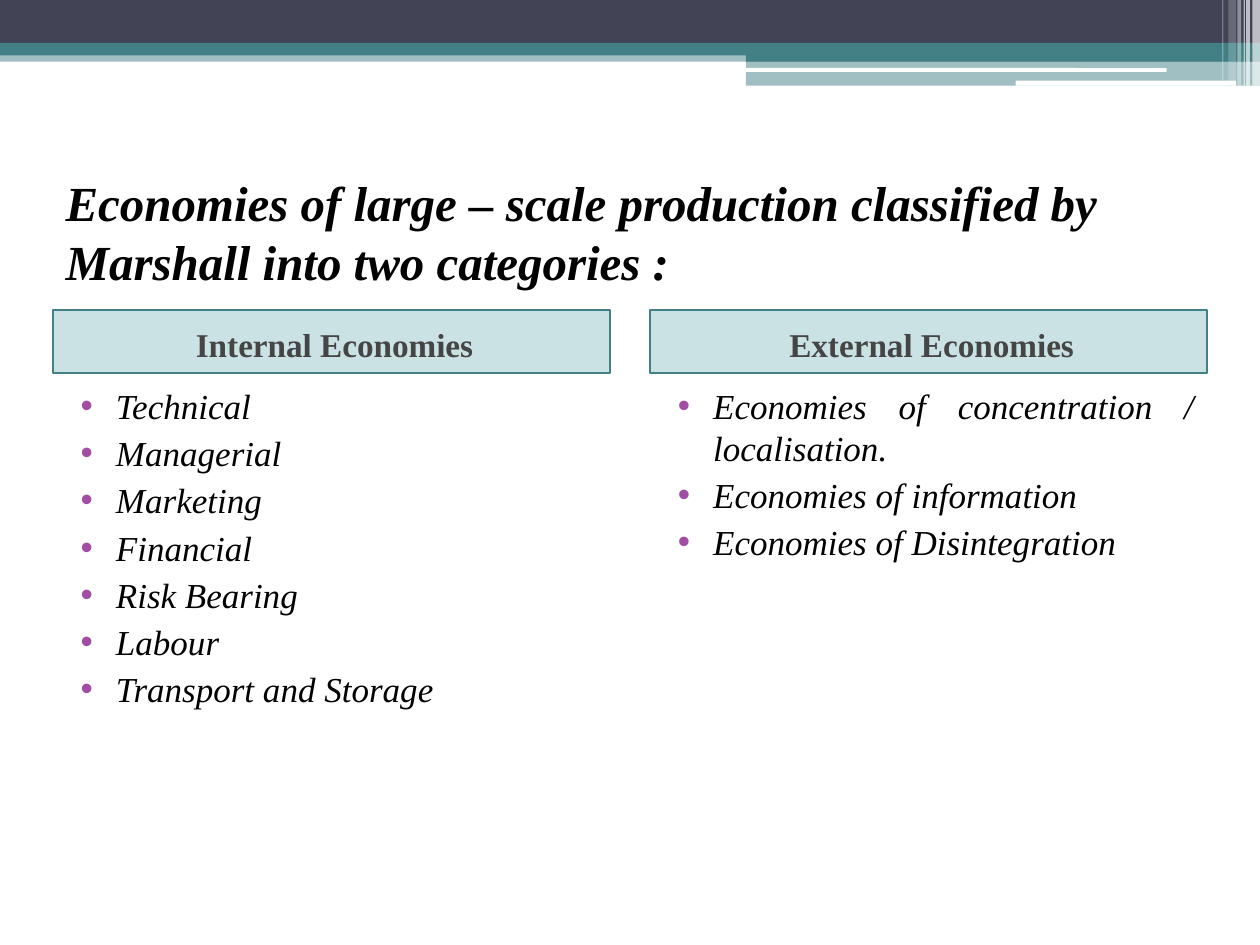
import pptx
import pptx.dml.color
import pptx.enum.shapes
import pptx.enum.text
import pptx.oxml.ns
import pptx.util
from lxml import etree

Inches, Pt = pptx.util.Inches, pptx.util.Pt
RGBColor = pptx.dml.color.RGBColor
Align = pptx.enum.text.PP_ALIGN
Anchor = pptx.enum.text.MSO_ANCHOR
Shape = pptx.enum.shapes.MSO_SHAPE
qn = pptx.oxml.ns.qn

WHITE = RGBColor(0xFF, 0xFF, 0xFF)
BLACK = RGBColor(0, 0, 0)
TEAL = RGBColor(0x43, 0x80, 0x86)
SLATE = RGBColor(0x42, 0x44, 0x56)
HEADING_FILL = RGBColor(0x32, 0x8E, 0x97)
HEADING_TEXT = RGBColor(0x45, 0x45, 0x45)
PURPLE = RGBColor(0xA0, 0x4D, 0xA3)
FONT = "Times New Roman"

TITLE = "Economies of large – scale production classified by Marshall into two categories :"
COLUMNS = [
    ("Internal Economies", ["Technical", "Managerial", "Marketing", "Financial",
                            "Risk Bearing", "Labour", "Transport and Storage"]),
    ("External Economies", ["Economies of concentration / localisation.",
                            "Economies of information",
                            "Economies of Disintegration"]),
]
BANDS = [
    (Shape.RECTANGLE, 0, 0.4, 10, 0.09, TEAL, 50),
    (Shape.RECTANGLE, 0, 0, 10, 0.34, SLATE, 100),
    (Shape.RECTANGLE, 0, 0.34, 10, 0.1, TEAL, 100),
    (Shape.RECTANGLE, 5.92, 0.39, 4.08, 0.1, TEAL, 100),
    (Shape.RECTANGLE, 5.92, 0.48, 4.08, 0.2, TEAL, 50),
    (Shape.ROUNDED_RECTANGLE, 5.91, 0.54, 3.35, 0.03, WHITE, 100),
    (Shape.ROUNDED_RECTANGLE, 8.06, 0.64, 1.75, 0.04, WHITE, 100),
]
STRIPES = [(9.94, 0.06, 0.68, 65), (9.89, 0.03, 0.68, 65), (9.87, 0.01, 0.68, 60),
           (9.82, 0.03, 0.68, 40), (9.75, 0.06, 0.64, 20), (9.7, 0.01, 0.64, 30)]
BANDS += [(Shape.RECTANGLE, left, 0, width, height, WHITE, opacity)
          for left, width, height, opacity in STRIPES]

MARGIN, COLUMN_STEP, COLUMN_WIDTH = 0.42, 4.74, 4.42


def fill_shape(shape, color, opacity):
    shape.fill.solid()
    shape.fill.fore_color.rgb = color
    if opacity < 100:
        color_node = shape.element.spPr.find(qn("a:solidFill"))[0]
        etree.SubElement(color_node, qn("a:alpha"), val=str(opacity * 1000))


def add_band(page, kind, left, top, width, height, color, opacity):
    band = page.shapes.add_shape(kind, Inches(left), Inches(top), Inches(width), Inches(height))
    band.shadow.inherit = False
    band.line.fill.background()
    fill_shape(band, color, opacity)
    page.shapes.title.element.addprevious(band.element)


def place(box, left, top, width, height, anchor, inset_top=0.05):
    box.left, box.top = Inches(left), Inches(top)
    box.width, box.height = Inches(width), Inches(height)
    frame = box.text_frame
    frame.word_wrap = True
    frame.auto_size = pptx.enum.text.MSO_AUTO_SIZE.NONE
    frame.vertical_anchor = anchor
    frame.margin_top = Inches(inset_top)


def write(box, lines, size, color, align, bold=False, italic=False, margin=0, indent=0, bullet=None):
    box.text_frame.text = "\n".join(lines)
    for index, para in enumerate(box.text_frame.paragraphs):
        para.alignment = align
        para.space_before = Pt(3 if index else 0)
        properties = para._p.get_or_add_pPr()
        properties.set("marL", str(Inches(margin)))
        properties.set("indent", str(Inches(indent)))
        if bullet:
            bullet_color = etree.SubElement(properties, qn("a:buClr"))
            etree.SubElement(bullet_color, qn("a:srgbClr"), val=str(PURPLE))
            etree.SubElement(properties, qn("a:buChar"), char=bullet)
        font = para.font
        font.name, font.size = FONT, Pt(size)
        font.bold, font.italic = bold, italic
        font.color.rgb = color


def main():
    deck = pptx.Presentation()
    deck.slide_width, deck.slide_height = Inches(10), Inches(7.5)
    page = deck.slides.add_slide(deck.slide_layouts.get_by_name("Comparison"))
    for band in BANDS:
        add_band(page, *band)

    title = page.shapes.title
    place(title, MARGIN, 1.25, 9.17, 1.17, Anchor.MIDDLE)
    write(title, [TITLE], 28, BLACK, Align.LEFT, bold=True, italic=True)

    boxes = list(page.placeholders)[1:]
    for index, (name, items) in enumerate(COLUMNS):
        heading, listing = boxes[2 * index:2 * index + 2]
        left = MARGIN + index * COLUMN_STEP
        place(heading, left, 2.46, COLUMN_WIDTH, 0.5, Anchor.MIDDLE, 0.09)
        fill_shape(heading, HEADING_FILL, 25)
        heading.line.color.rgb = TEAL
        heading.line.width = Pt(1)
        write(heading, [name], 19, HEADING_TEXT, Align.CENTER, bold=True, margin=0.05)
        place(listing, left, 2.96, COLUMN_WIDTH, 4.25, Anchor.TOP, 0.09)
        write(listing, items, 20, BLACK, Align.JUSTIFY, italic=True,
              margin=0.4, indent=-0.28, bullet="•")

    deck.save("out.pptx")


if __name__ == "__main__":
    main()
